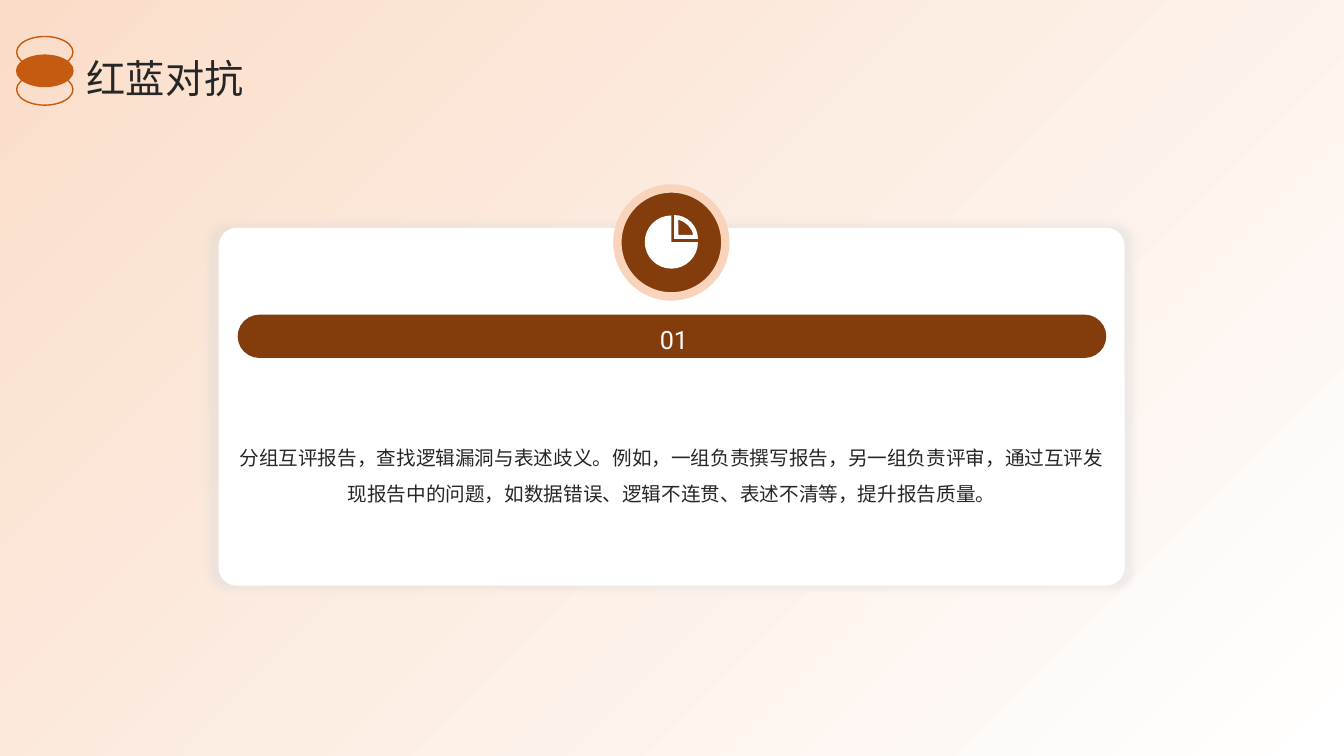
import math

from lxml import etree
from pptx import Presentation
from pptx.dml.color import RGBColor
from pptx.enum.shapes import MSO_SHAPE
from pptx.enum.text import MSO_ANCHOR, PP_ALIGN
from pptx.oxml.ns import qn
from pptx.util import Cm, Pt

RECTANGLE = MSO_SHAPE.RECTANGLE
ROUNDED = MSO_SHAPE.ROUNDED_RECTANGLE
OVAL = MSO_SHAPE.OVAL
LEFT, CENTER = PP_ALIGN.LEFT, PP_ALIGN.CENTER
MIDDLE = MSO_ANCHOR.MIDDLE

COLORS = {
    "white": "FFFFFF",
    "peach": "FADDC9",
    "ring": "F9D4BB",
    "brown": "833C0B",
    "orange": "C55A11",
    "text": "262626",
    "shadow": "D9D9D9",
}
CHINESE_FONT = "Noto Sans CJK SC"
NUMBER_FONT = "Roboto"

SLIDE_WIDTH, SLIDE_HEIGHT = 33.87, 19.05
UNITS_PER_CM = 1000


def color(name):
    return RGBColor.from_string(COLORS[name])


def paint(shape, fill=None, line=None, line_width=1):
    shape.shadow.inherit = False
    if fill:
        shape.fill.solid()
        shape.fill.fore_color.rgb = color(fill)
    else:
        shape.fill.background()
    if line:
        shape.line.color.rgb = color(line)
        shape.line.width = Pt(line_width)
    else:
        shape.line.fill.background()


def add_box(shapes, kind, box, radius=None, **style):
    shape = shapes.add_shape(kind, *map(Cm, box))
    if radius is not None:
        shape.adjustments[0] = radius
    paint(shape, **style)
    return shape


def add_text(slide, box, text, size, font, ink, align, spacing, inset=True):
    frame = slide.shapes.add_textbox(*map(Cm, box)).text_frame
    frame.word_wrap = True
    frame.vertical_anchor = MIDDLE
    if not inset:
        frame.margin_left = frame.margin_right = Cm(0)
        frame.margin_top = frame.margin_bottom = Cm(0)
    paragraph = frame.paragraphs[0]
    paragraph.alignment = align
    paragraph.line_spacing = spacing
    run = paragraph.add_run()
    run.text = text
    run.font.size = Pt(size)
    run.font.name = font
    run.font.color.rgb = color(ink)
    east_asian = etree.SubElement(run.font._element, qn("a:ea"))
    east_asian.set("typeface", font)


def add_background(slide):
    shape = add_box(slide.shapes, RECTANGLE, (0, 0, SLIDE_WIDTH, SLIDE_HEIGHT))
    shape.fill.gradient()
    shape.fill.gradient_angle = 135
    for stop, name, position in zip(shape.fill.gradient_stops, ("white", "peach"), (0, 1)):
        stop.color.rgb = color(name)
        stop.position = position


def add_glow_shadow(shape, blur, opacity, scale):
    """Give the shape a soft shadow, enlarged by a percentage around its centre."""
    effects = shape._element.spPr.find(qn("a:effectLst"))
    size = str(scale * 1000)
    shadow = etree.SubElement(effects, qn("a:outerShdw"), blurRad=str(Pt(blur)),
                              dist="0", dir="0", sx=size, sy=size,
                              algn="ctr", rotWithShape="0")
    tint = etree.SubElement(shadow, qn("a:srgbClr"), val=COLORS["shadow"])
    etree.SubElement(tint, qn("a:alpha"), val=str(opacity * 1000))


def arc(center, radius, start, end, pieces=1):
    """Start point and Bezier points of an arc, in degrees clockwise from the right."""
    def polar(angle, handle=0):
        return (center[0] + radius * (math.cos(angle) - handle * math.sin(angle)),
                center[1] + radius * (math.sin(angle) + handle * math.cos(angle)))

    step = math.radians(end - start) / pieces
    handle = 4 / 3 * math.tan(step / 4)
    points = [polar(math.radians(start))]
    for piece in range(pieces):
        angle = math.radians(start) + piece * step
        points += [polar(angle, handle), polar(angle + step, -handle), polar(angle + step)]
    return points


def bend_arcs(shape):
    """Turn every three segments after a contour's first one into a Bezier curve."""
    outline = shape._element.spPr.find(".//" + qn("a:path"))
    contours = []
    for command in outline:
        if command.tag == qn("a:moveTo"):
            contours.append([])
        elif command.tag == qn("a:lnTo"):
            contours[-1].append(command)
    for segments in contours:
        for first in range(1, len(segments) - 2, 3):
            curve = etree.Element(qn("a:cubicBezTo"))
            segments[first].addprevious(curve)
            for segment in segments[first:first + 3]:
                curve.append(segment[0])
                outline.remove(segment)


def add_pie_icon(slide):
    disc_center, wedge_center, cutout_corner = (16.92, 6.1), (16.99, 6.02), (17.1, 5.92)
    contours = [
        [disc_center] + arc(disc_center, 0.67, 0, 270, pieces=3),
        [wedge_center] + arc(wedge_center, 0.6, -90, 0),
        [cutout_corner] + arc(wedge_center, 0.49, -12, -78),
    ]
    builder = None
    for contour in contours:
        points = [(x * UNITS_PER_CM, y * UNITS_PER_CM) for x, y in contour]
        if builder is None:
            builder = slide.shapes.build_freeform(*points[0], scale=Cm(1) / UNITS_PER_CM)
        else:
            builder.move_to(*points[0])
        builder.add_line_segments(points[1:], close=True)
    icon = builder.convert_to_shape()
    bend_arcs(icon)
    paint(icon, fill="white")


def add_title_ornament(slide):
    group = slide.shapes.add_group_shape()
    for level, fill in ((2, None), (1, "orange"), (0, None)):
        add_box(group.shapes, OVAL, (0.42, 0.92 + 0.47 * level, 1.42, 0.79),
                fill=fill, line="orange")


def main():
    presentation = Presentation()
    presentation.slide_width = Cm(SLIDE_WIDTH)
    presentation.slide_height = Cm(SLIDE_HEIGHT)
    slide = presentation.slides.add_slide(presentation.slide_layouts[6])

    add_background(slide)
    card = add_box(slide.shapes, ROUNDED, (5.51, 5.74, 22.83, 9.02), 0.051, fill="white")
    add_glow_shadow(card, blur=5, opacity=40, scale=102)
    add_text(slide, (5.98, 9.39, 21.9, 4.9),
             "分组互评报告，查找逻辑漏洞与表述歧义。例如，一组负责撰写报告，另一组负责评审，"
             "通过互评发现报告中的问题，如数据错误、逻辑不连贯、表述不清等，提升报告质量。",
             14, CHINESE_FONT, "text", CENTER, 1.5, inset=False)
    add_box(slide.shapes, ROUNDED, (5.99, 7.93, 21.89, 1.09), 0.5, fill="brown")
    add_text(slide, (6.48, 7.94, 21.01, 1.09), "01",
             18, NUMBER_FONT, "white", CENTER, 1.2)
    add_box(slide.shapes, OVAL, (15.56, 4.75, 2.72, 2.72),
            fill="brown", line="ring", line_width=6)
    add_pie_icon(slide)
    add_text(slide, (2.19, 1.26, 29.64, 1.3), "红蓝对抗",
             28, CHINESE_FONT, "text", LEFT, 1.1, inset=False)
    add_title_ornament(slide)

    presentation.save("out.pptx")


if __name__ == "__main__":
    main()
